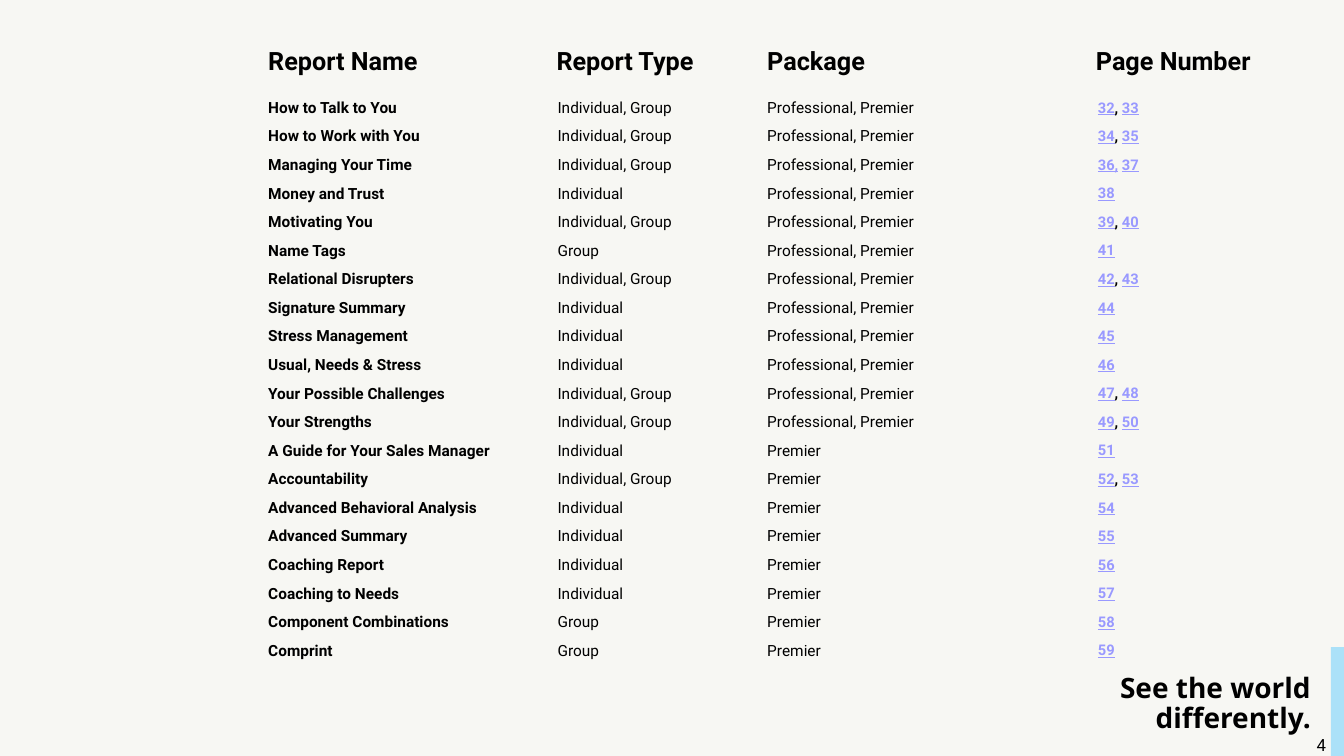
"""Build the report index slide: report names, types, packages and page numbers."""
import pptx
import pptx.dml.color
import pptx.enum.shapes
import pptx.enum.text
import pptx.oxml.ns
import pptx.util

Inches = pptx.util.Inches
MIDDLE = pptx.enum.text.MSO_ANCHOR.MIDDLE
THEME = {
    "background": "F7F7F3", "ink": "000000", "link": "9999FF", "accent": "ABE1F8",
    "body_font": "Roboto", "tagline_font": "Open Sans",
    "header_size": 18, "body_size": 11, "link_size": 10.5, "tagline_size": 20, "number_size": 12,
}
NO_STYLE = "{2D5ABB26-0587-4C30-8999-92F81FD0307C}"
TABLE_LEFT, TABLE_WIDTH = 2.56, 10.45
FIRST_PAGE = 32
LINKED_COMMAS = {36}

HEADERS = ["Report Name", "Report Type", "Package", "Page Number"]
BOTH, SINGLE, GROUP = "Individual, Group", "Individual", "Group"
REPORTS = {
    "Professional, Premier": [
        ("How to Talk to You", BOTH), ("How to Work with You", BOTH),
        ("Managing Your Time", BOTH), ("Money and Trust", SINGLE),
        ("Motivating You", BOTH), ("Name Tags", GROUP),
        ("Relational Disrupters", BOTH), ("Signature Summary", SINGLE),
        ("Stress Management", SINGLE), ("Usual, Needs & Stress", SINGLE),
        ("Your Possible Challenges", BOTH), ("Your Strengths", BOTH),
    ],
    "Premier": [
        ("A Guide for Your Sales Manager", SINGLE), ("Accountability", BOTH),
        ("Advanced Behavioral Analysis", SINGLE), ("Advanced Summary", SINGLE),
        ("Coaching Report", SINGLE), ("Coaching to Needs", SINGLE),
        ("Component Combinations", GROUP), ("Comprint", GROUP),
    ],
}


def write(paragraph, text, size="body_size", color="ink", font="body_font", bold=False, underline=False):
    run = paragraph.add_run()
    run.text = text
    run.font.name = THEME[font]
    run.font.size = pptx.util.Pt(THEME[size])
    run.font.color.rgb = pptx.dml.color.RGBColor.from_string(THEME[color])
    run.font.bold = bold
    run.font.underline = underline


def add_plain_table(slide, row_count, top, height, widths):
    frame = slide.shapes.add_table(row_count, len(widths), Inches(TABLE_LEFT), Inches(top),
                                   Inches(TABLE_WIDTH), Inches(height))
    next(frame.element.iter(pptx.oxml.ns.qn("a:tableStyleId"))).text = NO_STYLE
    table = frame.table
    table.first_row = table.horz_banding = False
    for column, width in zip(table.columns, widths):
        column.width = Inches(width)
    for row in table.rows:
        row.height = Inches(height / row_count)
    for cell in table.iter_cells():
        cell.fill.background()
        cell.margin_top = cell.margin_bottom = 0
        cell.vertical_anchor = MIDDLE
    return table


presentation = pptx.Presentation()
presentation.slide_width, presentation.slide_height = Inches(13.33), Inches(7.5)
slide = presentation.slides.add_slide(presentation.slide_layouts[6])
slide.background.fill.solid()
slide.background.fill.fore_color.rgb = pptx.dml.color.RGBColor.from_string(THEME["background"])

tagline = slide.shapes.add_textbox(Inches(10.79), Inches(6.6), Inches(2.31), Inches(0.77)).text_frame
tagline.word_wrap = True
tagline.vertical_anchor = MIDDLE
tagline_paragraph = tagline.paragraphs[0]
tagline_paragraph.alignment = pptx.enum.text.PP_ALIGN.RIGHT
tagline_paragraph.line_spacing = 0.9
write(tagline_paragraph, "See the world differently.", size="tagline_size", font="tagline_font", bold=True)

accent_bar = slide.shapes.add_shape(pptx.enum.shapes.MSO_SHAPE.RECTANGLE,
                                    Inches(13.2), Inches(6.42), Inches(0.14), Inches(1.08))
accent_bar.shadow.inherit = False
accent_bar.fill.solid()
accent_bar.fill.fore_color.rgb = pptx.dml.color.RGBColor.from_string(THEME["accent"])
accent_bar.line.fill.background()

header_table = add_plain_table(slide, 1, 0.41, 0.41, [2.86, 2.09, 3.26, 2.24])
for cell, header in zip(header_table.iter_cells(), HEADERS):
    write(cell.text_frame.paragraphs[0], header, size="header_size", bold=True)

rows = [(name, kind, package) for package, reports in REPORTS.items() for name, kind in reports]
report_table = add_plain_table(slide, len(rows), 0.93, 5.67, [2.87, 2.08, 3.28, 2.22])
page = FIRST_PAGE
for row_index, row in enumerate(rows):
    for column_index, text in enumerate(row):
        paragraph = report_table.cell(row_index, column_index).text_frame.paragraphs[0]
        write(paragraph, text, bold=column_index == 0)
    paragraph = report_table.cell(row_index, len(row)).text_frame.paragraphs[0]
    last_page = page + (row[1] == BOTH)
    while page <= last_page:
        linked_comma = "," if page in LINKED_COMMAS else ""
        write(paragraph, f"{page}{linked_comma}", size="link_size", color="link", bold=True, underline=True)
        if page < last_page:
            write(paragraph, " " if linked_comma else ", ", size="link_size", bold=True)
        page += 1

page_number = slide.shapes.add_textbox(Inches(12.96), Inches(7.24), Inches(0.35), Inches(0.3)).text_frame
page_number.word_wrap = True
write(page_number.paragraphs[0], "4", size="number_size")

presentation.save("out.pptx")
